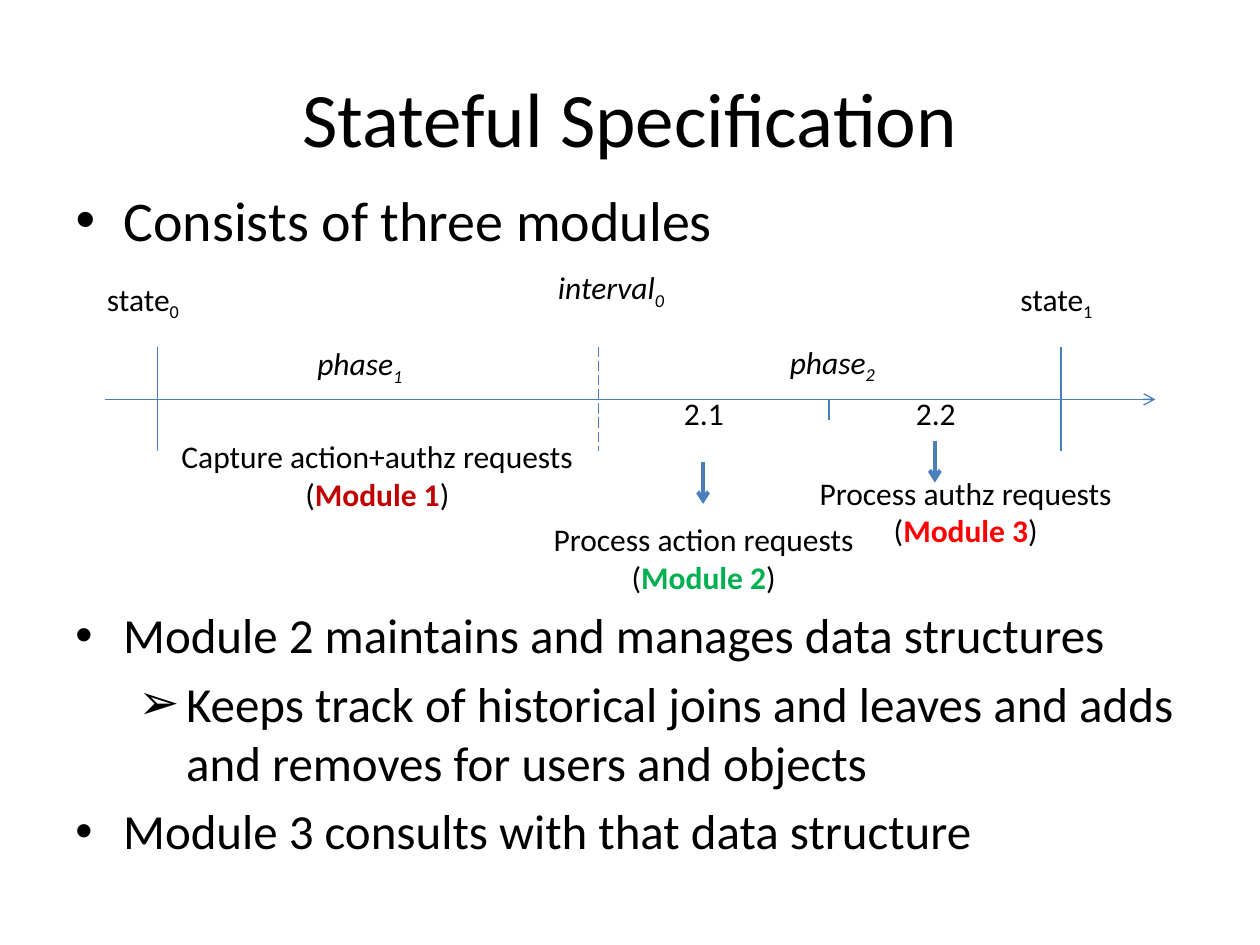
from lxml.etree import SubElement
from pptx import Presentation
from pptx.dml.color import RGBColor
from pptx.enum.dml import MSO_LINE
from pptx.enum.shapes import MSO_CONNECTOR
from pptx.enum.text import MSO_ANCHOR, MSO_AUTO_SIZE, PP_ALIGN
from pptx.oxml.ns import qn
from pptx.util import Inches, Pt

FONT = "Calibri"
COLORS = {
    "text": "000000",
    "line": "4B7EBC",
    "module 1": "C00000",
    "module 2": "00B050",
    "module 3": "FF0000",
}
AXIS_Y = 3.17


def place(shape, left, top, width, height):
    shape.left, shape.top = Inches(left), Inches(top)
    shape.width, shape.height = Inches(width), Inches(height)


def add_span(para, text, size=18, color="text", bold=False, italic=False, subscript=False):
    span = para.add_run()
    span.text = text
    font = span.font
    font.name, font.size = FONT, Pt(size)
    font.bold, font.italic = bold, italic
    font.color.rgb = RGBColor.from_string(COLORS[color])
    if subscript:
        font._element.set("baseline", "-25000")


def add_box(page, left, top, width, height):
    box = page.shapes.add_textbox(*map(Inches, (left, top, width, height)))
    box.text_frame.word_wrap = True
    return box


def add_label(page, left, top, word, index=None, italic=False, width=1.42):
    para = add_box(page, left, top, width, 0.4).text_frame.paragraphs[0]
    add_span(para, word, italic=italic)
    if index:
        add_span(para, index, italic=italic, subscript=True)


def add_module(page, left, top, task, number):
    frame = add_box(page, left, top, 3.33, 0.71).text_frame
    first, second = frame.paragraphs[0], frame.add_paragraph()
    first.alignment = second.alignment = PP_ALIGN.CENTER
    add_span(first, task)
    add_span(second, "(")
    add_span(second, f"Module {number}", color=f"module {number}", bold=True)
    add_span(second, ")")


def add_line(page, x1, y1, x2, y2, weight=0.75, arrow=False, dash=None):
    line = page.shapes.add_connector(MSO_CONNECTOR.STRAIGHT, *map(Inches, (x1, y1, x2, y2)))
    line.line.color.rgb = RGBColor.from_string(COLORS["line"])
    line.line.width = Pt(weight)
    if dash:
        line.line.dash_style = dash
    if arrow:
        SubElement(line.line._get_or_add_ln(), qn("a:tailEnd"), type="arrow")
    SubElement(line._element.spPr, qn("a:effectLst"))


def fill_list(frame, items, size):
    for position, (level, text) in enumerate(items):
        para = frame.add_paragraph() if position else frame.paragraphs[0]
        para.level = level
        para.space_before = Pt(size * 0.2)
        properties = para._p.get_or_add_pPr()
        properties.set("marL", str(Inches(0.38 + 0.5 * level)))
        properties.set("indent", str(Inches(-0.38)))
        SubElement(properties, qn("a:buFont"), typeface="Arial")
        SubElement(properties, qn("a:buChar"), char="•➢"[level])
        add_span(para, text, size)


def add_timeline(page):
    # Axis, state borders, phase border and step border
    add_line(page, 0.83, AXIS_Y, 9.17, AXIS_Y, arrow=True)
    for x, dash in ((1.25, None), (8.42, None), (4.75, MSO_LINE.LONG_DASH)):
        add_line(page, x, 2.75, x, 3.58, dash=dash)
    add_line(page, 6.58, AXIS_Y, 6.58, 3.33)

    # States, interval and phases
    add_label(page, 0.75, 2.17, "state", "0")
    add_label(page, 8, 2.17, "state", "1")
    add_label(page, 4.33, 2.08, "interval", "0", italic=True)
    add_label(page, 2.42, 2.68, "phase", "1", italic=True)
    add_label(page, 6.17, 2.67, "phase", "2", italic=True)

    # Steps of the second phase, with arrows to their modules
    for step, left, x, y in (("2.1", 5.33, 5.58, 3.67), ("2.2", 7.17, 7.42, 3.5)):
        add_label(page, left, 3.08, step, width=0.58)
        add_line(page, x, y, x, y + 0.33, weight=2.25, arrow=True)

    # Modules
    add_module(page, 1.33, 3.42, "Capture action+authz requests", 1)
    add_module(page, 3.92, 4.08, "Process action requests", 2)
    add_module(page, 6, 3.71, "Process authz requests", 3)


def main():
    deck = Presentation()
    deck.slide_width, deck.slide_height = Inches(10), Inches(7.5)
    page = deck.slides.add_slide(deck.slide_layouts[1])

    # Title
    title = page.shapes.title
    place(title, 0.5, 0.3, 9, 1.25)
    title.text_frame.vertical_anchor = MSO_ANCHOR.MIDDLE
    para = title.text_frame.paragraphs[0]
    para.alignment = PP_ALIGN.CENTER
    add_span(para, "Stateful Specification", 44)

    # Opening point
    body = page.placeholders[1]
    place(body, 0.5, 1.42, 9, 0.67)
    body.text_frame.auto_size = MSO_AUTO_SIZE.NONE
    fill_list(body.text_frame, [(0, "Consists of three modules")], 32)

    add_timeline(page)

    # Closing points
    closing = add_box(page, 0.5, 4.75, 9, 2.25)
    fill_list(closing.text_frame, [
        (0, "Module 2 maintains and manages data structures"),
        (1, "Keeps track of historical joins and leaves and adds and removes for users and objects"),
        (0, "Module 3 consults with that data structure"),
    ], 28)

    deck.save("out.pptx")


if __name__ == "__main__":
    main()
